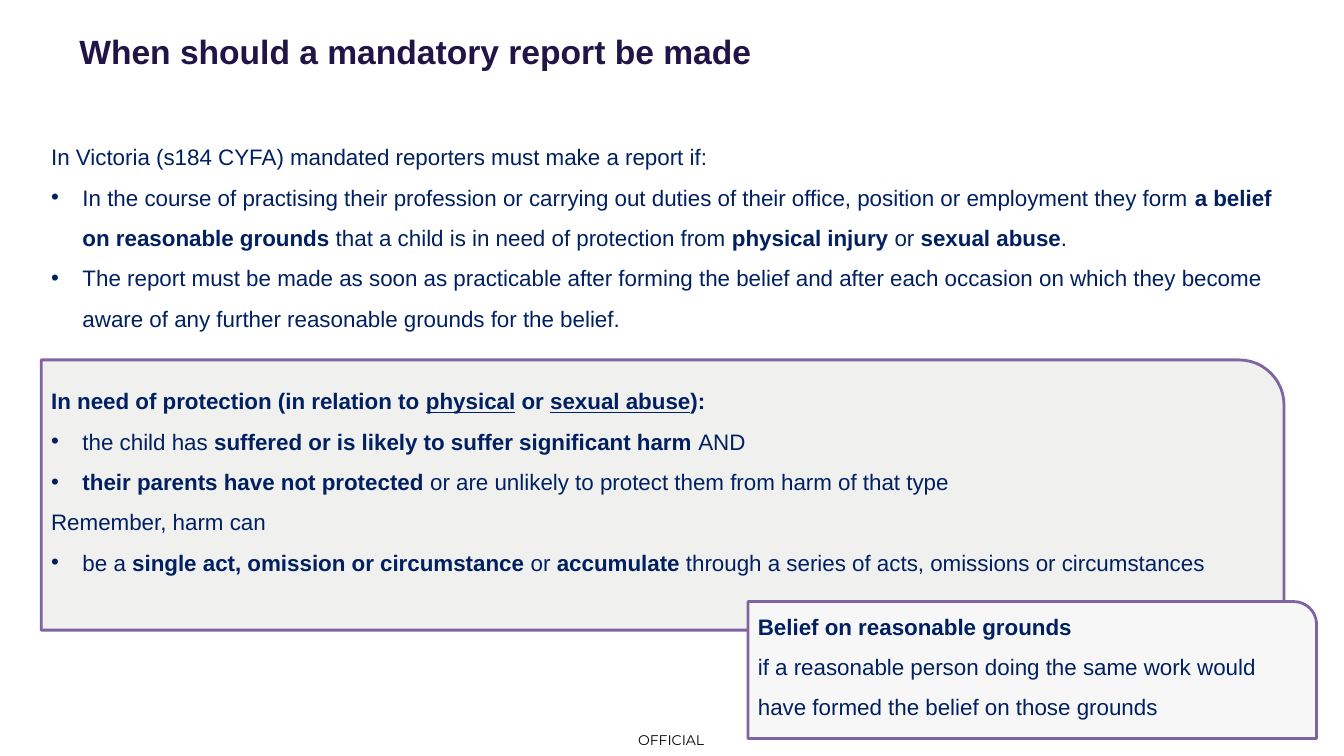
from lxml import etree
from pptx import Presentation
from pptx.dml.color import RGBColor
from pptx.enum.shapes import MSO_SHAPE
from pptx.enum.text import MSO_ANCHOR, PP_ALIGN
from pptx.oxml.ns import qn
from pptx.util import Cm, Pt

ROUND_ONE = MSO_SHAPE.ROUND_1_RECTANGLE
TOP, MIDDLE = MSO_ANCHOR.TOP, MSO_ANCHOR.MIDDLE
LEFT, CENTER = PP_ALIGN.LEFT, PP_ALIGN.CENTER

COLORS = {
    "title": "201547",
    "body": "002060",
    "label": "000000",
    "border": "8064A2",
    "panel": "F0F0EF",
    "note": "F7F7F7",
}
MARGIN, WIDTH = 1.04, 31.32
INSETS = (0.25, 0.13, 0.25, 0.13)
HANG = Cm(0.79)

DUTY = [
    (False, [("In Victoria (s184 CYFA) mandated reporters must make a report if:", "")]),
    (True, [
        ("In the course of practising their profession or carrying out duties of "
         "their office, position or employment they form ", ""),
        ("a belief on reasonable grounds", "b"),
        (" that a child is in need of protection from ", ""),
        ("physical injury ", "b"),
        ("or ", ""),
        ("sexual abuse", "b"),
        (".", ""),
    ]),
    (True, [("The report must be made as soon as practicable after forming the belief "
             "and after each occasion on which they become aware of any further "
             "reasonable grounds for the belief.", "")]),
]
PROTECTION = [
    (False, [
        ("In need of protection (in relation to ", "b"),
        ("physical", "bu"),
        (" or ", "b"),
        ("sexual abuse", "bu"),
        ("):", "b"),
    ]),
    (True, [
        ("the child has ", ""),
        ("suffered or is likely to suffer significant harm ", "b"),
        ("AND", ""),
    ]),
    (True, [
        ("their parents have not protected ", "b"),
        ("or are unlikely to protect them from harm of that type", ""),
    ]),
    (False, [("Remember, harm can", "")]),
    (True, [
        ("be a ", ""),
        ("single act, omission or circumstance ", "b"),
        ("or ", ""),
        ("accumulate", "b"),
        (" through a series of acts, omissions or circumstances", ""),
    ]),
]
BELIEF = [
    (False, [("Belief on reasonable grounds", "b")]),
    (False, [("if a reasonable person doing the same work would have formed "
              "the belief on those grounds", "")]),
]


def rgb(name):
    return RGBColor.from_string(COLORS[name])


def add_bullet(p):
    pPr = p._p.get_or_add_pPr()
    pPr.set("marL", str(HANG))
    pPr.set("indent", str(-HANG))
    etree.SubElement(pPr, qn("a:buFont")).set("typeface", "Arial")
    etree.SubElement(pPr, qn("a:buChar")).set("char", "•")


def write_text(sp, paragraphs, size=16, font="Arial", color="body", spacing=1.5,
               align=LEFT, anchor=TOP, insets=INSETS):
    tf = sp.text_frame
    tf.word_wrap = True
    tf.vertical_anchor = anchor
    tf.margin_left, tf.margin_top, tf.margin_right, tf.margin_bottom = map(Cm, insets)
    for i, (bulleted, runs) in enumerate(paragraphs):
        p = tf.add_paragraph() if i else tf.paragraphs[0]
        if bulleted:
            add_bullet(p)
        p.alignment = align
        p.line_spacing = spacing
        for text, style in runs:
            r = p.add_run()
            r.text = text
            r.font.name = font
            r.font.size = Pt(size)
            r.font.color.rgb = rgb(color)
            r.font.bold = "b" in style
            r.font.underline = "u" in style


def add_text(s, box, paragraphs, **fmt):
    write_text(s.shapes.add_textbox(*map(Cm, box)), paragraphs, **fmt)


def add_panel(s, box, fill, paragraphs, **fmt):
    sp = s.shapes.add_shape(ROUND_ONE, *map(Cm, box))
    sp.shadow.inherit = False
    sp.fill.solid()
    sp.fill.fore_color.rgb = rgb(fill)
    sp.line.color.rgb = rgb("border")
    sp.line.width = Pt(2)
    write_text(sp, paragraphs, anchor=MIDDLE, **fmt)


def main():
    prs = Presentation()
    prs.slide_width, prs.slide_height = Cm(33.87), Cm(19.05)
    s = prs.slides.add_slide(prs.slide_layouts[6])

    add_text(s, (15.62, 18.26, 2.59, 0.79), [(False, [("OFFICIAL", "")])],
             size=10, font="Montserrat", color="label", spacing=1.0,
             align=CENTER, anchor=MIDDLE, insets=(0, 0, 0, 0))
    add_text(s, (2, 0, 24, 2.49),
             [(False, [("When should a mandatory report be made", "b")])],
             size=24, color="title", spacing=1.1, anchor=MIDDLE, insets=(0, 0, 0, 0))
    add_text(s, (MARGIN, 3.15, WIDTH, 5.26), DUTY)
    add_panel(s, (MARGIN, 9.07, WIDTH, 6.81), "panel", PROTECTION,
              insets=(0.25, 0.13, 0.25, 1.15))
    add_panel(s, (18.85, 15.16, 14.33, 3.45), "note", BELIEF,
              insets=(0.25, 0.13, 0.25, 0.64))

    prs.save("out.pptx")


if __name__ == "__main__":
    main()
